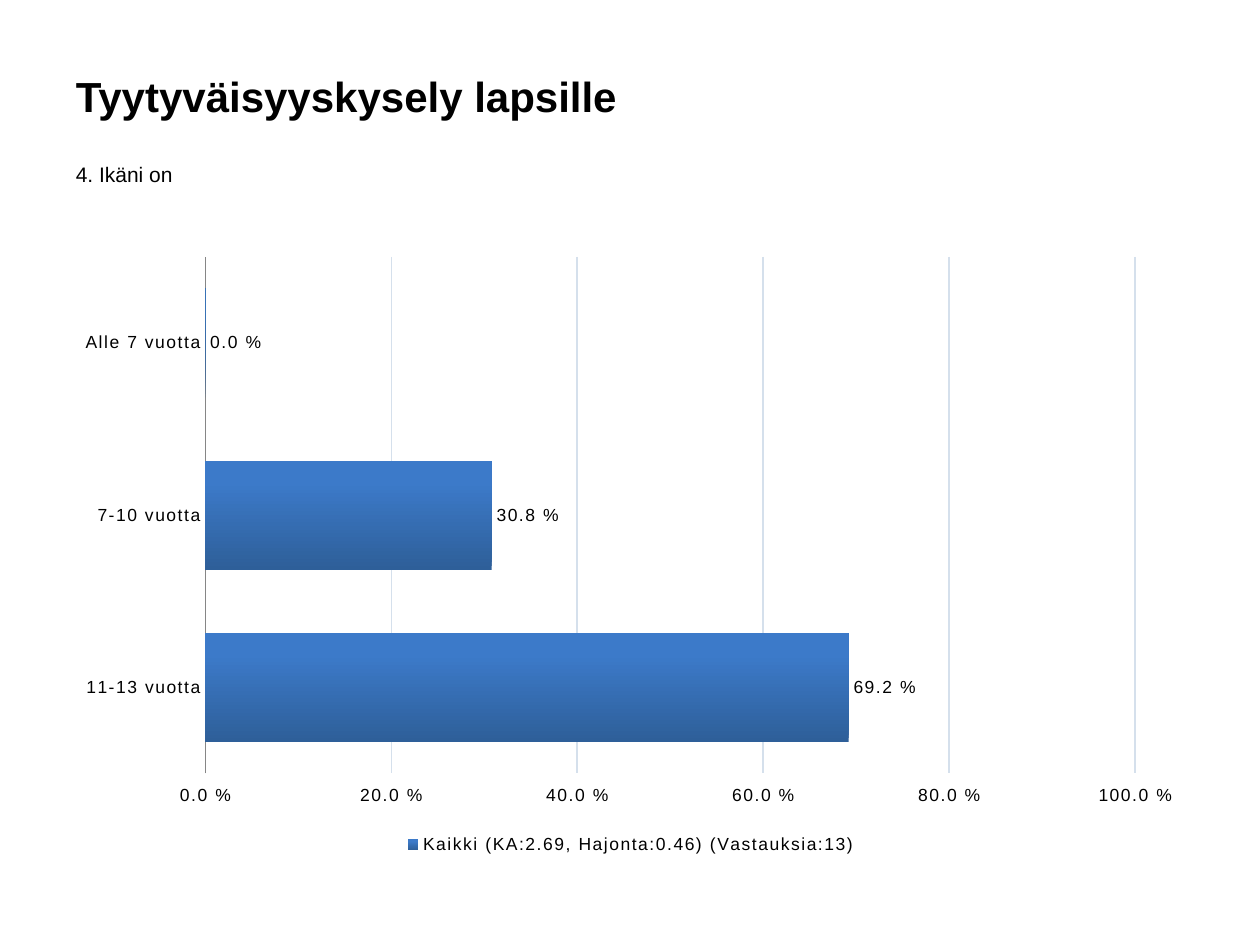
from lxml import etree
from pptx import Presentation
from pptx.chart.data import CategoryChartData
from pptx.dml.color import RGBColor
from pptx.enum.chart import (XL_CHART_TYPE, XL_LABEL_POSITION, XL_LEGEND_POSITION,
                             XL_TICK_LABEL_POSITION, XL_TICK_MARK)
from pptx.enum.text import MSO_ANCHOR
from pptx.util import Cm, Pt

BAR = XL_CHART_TYPE.BAR_CLUSTERED
BASE = XL_LEGEND_POSITION.BOTTOM
OUT = XL_LABEL_POSITION.OUTSIDE_END
NONE = XL_TICK_MARK.NONE
HIGH = XL_TICK_LABEL_POSITION.HIGH
TOP, MID = MSO_ANCHOR.TOP, MSO_ANCHOR.MIDDLE

HUES = {"text": "000000", "dark": "2E5F99", "light": "3C7AC9",
        "grid": "D5E0EC", "line": "868686"}
FACE = "Arial"
LEFT, WIDTH = Cm(1.28), Cm(22.86)
RATE = "0.0\\ %"
PLOT = {"layoutTarget": "inner", "xMode": "edge", "yMode": "edge",
        "x": "0.125", "y": "0.02", "w": "0.82", "h": "0.84"}


def hue(name):
    return RGBColor.from_string(HUES[name])


def set_font(font, size, bold=False):
    font.name, font.size, font.bold = FACE, Pt(size), bold
    font.color.rgb = hue("text")


def write(frame, text, size=12, bold=False, anchor=TOP, before=0):
    frame.word_wrap = True
    frame.vertical_anchor = anchor
    para = frame.paragraphs[0]
    para.space_before = Pt(before)
    run = para.add_run()
    run.text = text
    set_font(run.font, size, bold)


class Deck:
    def __init__(self):
        self.show = Presentation()
        self.show.slide_width, self.show.slide_height = Cm(25.4), Cm(19.05)
        self.slide = self.show.slides.add_slide(self.show.slide_layouts[6])

    def text(self, top, height, words, **style):
        box = self.slide.shapes.add_textbox(LEFT, top, WIDTH, height)
        write(box.text_frame, words, **style)

    def bars(self, top, height, name, shares):
        data = CategoryChartData(number_format=RATE)
        data.categories = list(shares)
        data.add_series(name, list(shares.values()))
        frame = self.slide.shapes.add_chart(BAR, LEFT, top, WIDTH, height, data)
        chart = frame.chart
        chart.has_title = False
        set_font(chart.font, 10)
        self.fill(chart.plots[0])
        self.axes(chart)
        chart.has_legend = True
        chart.legend.position = BASE
        chart.legend.include_in_layout = False
        set_font(chart.legend.font, 10)
        self.place(chart)

    def fill(self, plot):
        plot.gap_width = 58
        plot.vary_by_categories = False
        bar = plot.series[0]
        bar.invert_if_negative = False
        paint = bar.format.fill
        paint.gradient()
        paint.gradient_angle = 90
        for stop, tone, spot in zip(paint.gradient_stops, ("dark", "light"), (0, 0.8)):
            stop.color.rgb = hue(tone)
            stop.position = spot
        tags = bar.data_labels
        tags.show_value = True
        tags.number_format, tags.number_format_is_linked = RATE, False
        tags.position = OUT
        set_font(tags.font, 10)

    def axes(self, chart):
        ages, scale = chart.category_axis, chart.value_axis
        for axis in (ages, scale):
            axis.major_tick_mark = axis.minor_tick_mark = NONE
            set_font(axis.tick_labels.font, 10)
        ages.reverse_order = True
        ages.format.line.color.rgb = hue("line")
        ages.format.line.width = Pt(0.75)
        scale.minimum_scale, scale.maximum_scale, scale.major_unit = 0, 1, 0.2
        scale.tick_label_position = HIGH
        scale.tick_labels.number_format = RATE
        scale.tick_labels.number_format_is_linked = False
        scale.format.line.fill.background()
        grid = scale.major_gridlines.format.line
        grid.color.rgb = hue("grid")
        grid.width = Pt(0.75)

    def place(self, chart):
        root = chart.element
        for font in root.xpath(".//a:defRPr"):
            font.set("spc", "100")
        area = root.xpath(".//c:plotArea")[0]
        for old in area.xpath("./c:layout"):
            area.remove(old)
        space = "{" + root.nsmap["c"] + "}"
        outer = etree.Element(space + "layout")
        inner = etree.SubElement(outer, space + "manualLayout")
        for key, value in PLOT.items():
            etree.SubElement(inner, space + key).set("val", value)
        area.insert(0, outer)


def main():
    deck = Deck()
    deck.text(Cm(0.93), Cm(2), "Tyytyväisyyskysely lapsille", size=24, bold=True, anchor=MID)
    deck.text(Cm(3.14), Cm(1.5), "4. Ikäni on", before=2.4)
    deck.bars(Cm(4.93), Cm(12.4), "Kaikki (KA:2.69, Hajonta:0.46) (Vastauksia:13)",
              {"Alle 7 vuotta": 0, "7-10 vuotta": 0.308, "11-13 vuotta": 0.692})
    deck.show.save("out.pptx")


if __name__ == "__main__":
    main()
